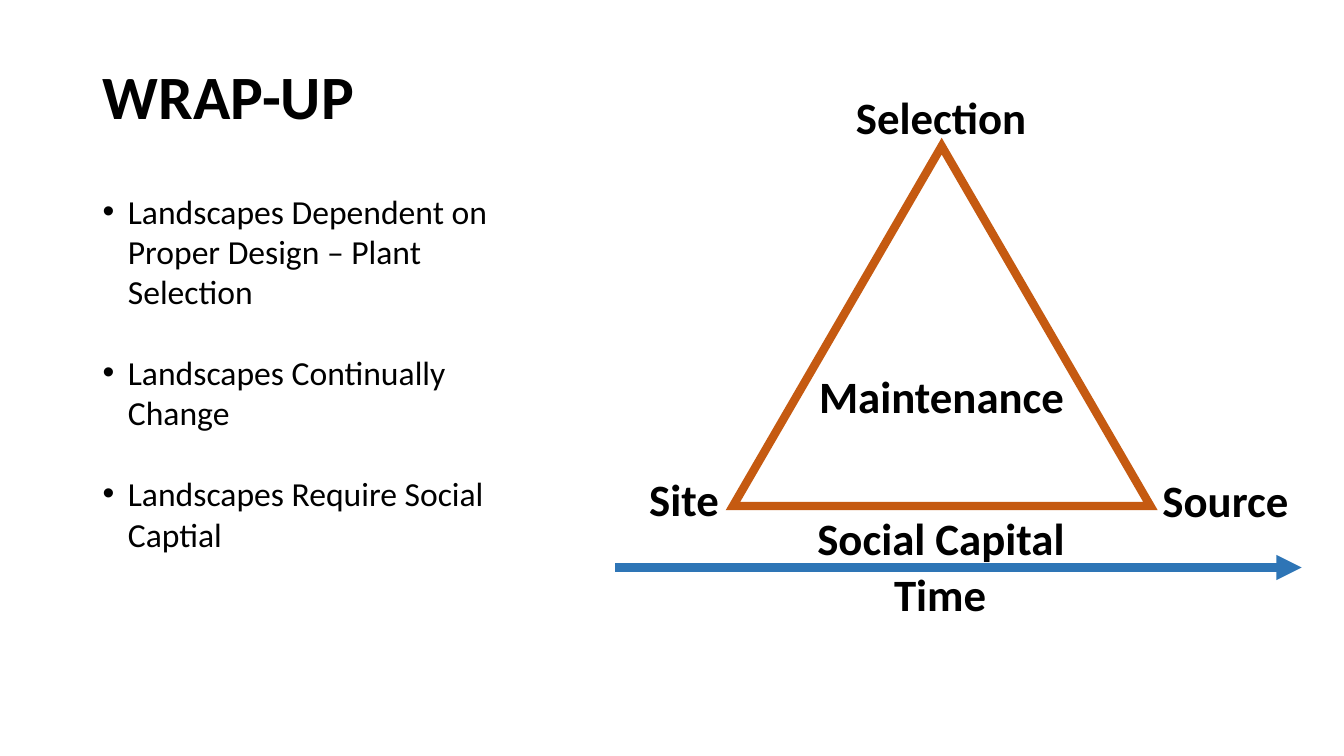
from lxml.etree import SubElement
from pptx import Presentation
from pptx.dml.color import RGBColor
from pptx.enum.shapes import MSO_CONNECTOR, MSO_SHAPE
from pptx.enum.text import MSO_ANCHOR, MSO_AUTO_SIZE, PP_ALIGN
from pptx.oxml.ns import qn
from pptx.util import Pt

PX = 9144


def px(*sizes):
    return [size * PX for size in sizes]


def color(text):
    return RGBColor.from_string(text)


class Deck:
    font = "Calibri"
    ink = "000000"
    rust = "C55A11"
    blue = "2E75B6"

    def __init__(self, width, height):
        self.show = Presentation()
        self.show.slide_width, self.show.slide_height = px(width, height)
        self.slide = self.show.slides.add_slide(self.show.slide_layouts[5])
        self.shapes = self.slide.shapes

    def add_text(self, para, text, size, bold=False):
        run = para.add_run()
        run.text = text
        run.font.name = self.font
        run.font.size = Pt(size)
        run.font.bold = bold
        run.font.color.rgb = color(self.ink)

    def frame(self, shape, anchor):
        frame = shape.text_frame
        frame.word_wrap = True
        frame.auto_size = MSO_AUTO_SIZE.NONE
        frame.vertical_anchor = anchor
        return frame

    def title(self, text, *box):
        shape = self.shapes.title
        shape.left, shape.top, shape.width, shape.height = px(*box)
        para = self.frame(shape, MSO_ANCHOR.TOP).paragraphs[0]
        para.alignment = PP_ALIGN.LEFT
        para.line_spacing = 0.9
        self.add_text(para, text, 44, True)

    def bullets(self, items, *box):
        frame = self.frame(self.shapes.add_textbox(*px(*box)), MSO_ANCHOR.TOP)
        for index, item in enumerate(items):
            para = frame.add_paragraph() if index else frame.paragraphs[0]
            props = para._p.get_or_add_pPr()
            props.set("marL", str(25 * PX))
            props.set("indent", str(-25 * PX))
            SubElement(props, qn("a:buFont"), typeface="Arial")
            SubElement(props, qn("a:buChar"), char="•")
            if index:
                para.space_before = Pt(29)
            self.add_text(para, item, 24)

    def label(self, text, *box):
        frame = self.frame(self.shapes.add_textbox(*px(*box)), MSO_ANCHOR.MIDDLE)
        para = frame.paragraphs[0]
        para.alignment = PP_ALIGN.CENTER
        self.add_text(para, text, 32, True)

    def stroke(self, shape, tint):
        shape.line.color.rgb = color(tint)
        shape.line.width = Pt(6)
        edge = shape._element.spPr.find(qn("a:ln"))
        SubElement(edge, qn("a:miter"), lim="800000")
        return edge

    def triangle(self, *box):
        shape = self.shapes.add_shape(MSO_SHAPE.ISOSCELES_TRIANGLE, *px(*box))
        shape.shadow.inherit = False
        shape.fill.background()
        self.stroke(shape, self.rust)

    def arrow(self, *ends):
        line = self.shapes.add_connector(MSO_CONNECTOR.STRAIGHT, *px(*ends))
        SubElement(self.stroke(line, self.blue), qn("a:tailEnd"), type="triangle")
        SubElement(line._element.spPr, qn("a:effectLst"))


def main():
    deck = Deck(1333, 750)
    deck.title("WRAP-UP", 92, 61, 1150, 124)
    deck.bullets(
        [
            "Landscapes Dependent on Proper Design – Plant Selection",
            "Landscapes Continually Change",
            "Landscapes Require Social Captial",
        ],
        92, 184, 432, 508,
    )
    deck.triangle(727, 145, 414, 357)
    deck.label("Selection", 745, 84, 377, 64)
    deck.label("Site", 555, 463, 247, 64)
    deck.label("Source", 1107, 464, 217, 64)
    deck.label("Maintenance", 799, 360, 270, 64)
    deck.arrow(610, 563, 1291, 563)
    deck.label("Time", 832, 562, 201, 53)
    deck.label("Social Capital", 787, 501, 293, 64)
    deck.show.save("out.pptx")


if __name__ == "__main__":
    main()
